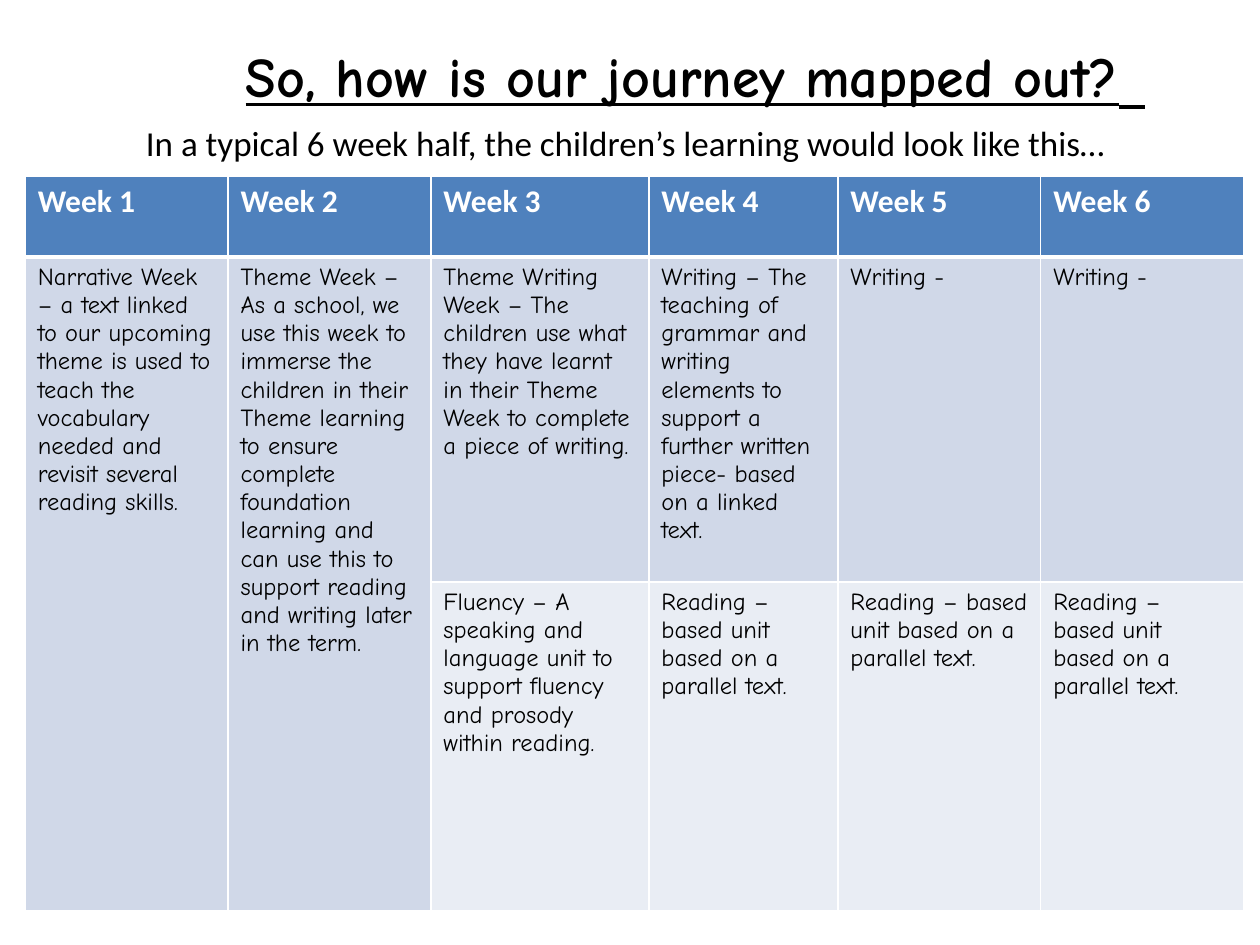
from lxml.etree import SubElement
from pptx import Presentation
from pptx.dml.color import RGBColor
from pptx.enum.text import PP_ALIGN as Align
from pptx.oxml.ns import qn
from pptx.util import Inches, Pt

SLIDE_W, SLIDE_H = Inches(10), Inches(7.5)
HAND, PLAIN = "Comic Neue", "Calibri"
BLACK, WHITE = "000000", "FFFFFF"
COLUMNS = [1.61, 1.61, 1.73, 1.5, 1.61, 1.61]
ROWS = [0.64, 2.58, 2.61]
ROW_FILLS = ["4F81BD", "D0D8E8", "E9EDF4"]
WEEKS = [f"Week {number}" for number in range(1, 7)]
FIRST_HALF = [
    "Narrative Week – a text linked to our upcoming theme is used to teach the "
    "vocabulary needed and revisit several reading skills.",
    "Theme Week – As a school, we use this week to immerse the children in their "
    "Theme learning to ensure complete foundation learning and can use this to "
    "support reading and writing later in the term.",
    "Theme Writing Week – The children use what they have learnt in their Theme "
    "Week to complete a piece of writing.",
    "Writing – The teaching of grammar and writing elements to support a further "
    "written piece- based on a linked text.",
    "Writing -",
    "Writing -",
]
SECOND_HALF = [
    "",
    "",
    "Fluency – A speaking and language unit to support fluency and prosody "
    "within reading.",
    "Reading – based unit based on a parallel text.",
    "Reading – based unit based on a parallel text.",
    "Reading –\nbased unit based on a parallel text.",
]


def colour(code):
    """Turn a hex string into a colour."""
    return RGBColor.from_string(code)


def add_run(paragraph, text, size, face, ink=BLACK, bold=False, underline=False):
    """Append one styled run to a paragraph."""
    run = paragraph.add_run()
    run.text = text
    font = run.font
    font.size, font.name = Pt(size), face
    font.bold, font.underline = bold, underline
    font.color.rgb = colour(ink)


def add_heading(slide):
    """Add the underlined question and its introductory sentence."""
    heading = slide.shapes.add_textbox(
        Inches(1.06), Inches(0.13), Inches(8.92), Inches(1.25)
    )
    frame = heading.text_frame
    frame.word_wrap = True
    question = frame.paragraphs[0]
    question.alignment = Align.CENTER
    for text, size in (("So, how is our journey mapped out?", 32), (" ", 43)):
        add_run(question, text, size, HAND, bold=True, underline=True)
    intro = frame.add_paragraph()
    intro.alignment = Align.LEFT
    intro.space_before = Pt(5)
    add_run(
        intro,
        "In a typical 6 week half, the children’s learning would look like this…",
        20,
        PLAIN,
    )


def add_borders(cell, bottom_width):
    """Draw white lines on the four sides of a cell."""
    properties = cell._tc.get_or_add_tcPr()
    for side, width in (("L", 1), ("R", 1), ("T", 1), ("B", bottom_width)):
        line = SubElement(properties, qn(f"a:ln{side}"), w=str(Pt(width)))
        SubElement(SubElement(line, qn("a:solidFill")), qn("a:srgbClr"), val=WHITE)


def fill_cell(cell, text, fill, is_header):
    """Set the borders, fill and wording of one cell."""
    add_borders(cell, 3 if is_header else 1)
    cell.fill.solid()
    cell.fill.fore_color.rgb = colour(fill)
    style = (18, PLAIN, WHITE, True) if is_header else (14, HAND)
    paragraph = cell.text_frame.paragraphs[0]
    for index, part in enumerate(text.split("\n") if text else []):
        if index:
            paragraph.add_line_break()
        add_run(paragraph, part, *style)


def add_timetable(slide):
    """Add the six-week table with its two full-height weeks."""
    timetable = slide.shapes.add_table(
        len(ROWS), len(COLUMNS), Inches(0.2), Inches(1.4),
        Inches(sum(COLUMNS)), Inches(sum(ROWS)),
    ).table
    for column, width in zip(timetable.columns, COLUMNS):
        column.width = Inches(width)
    for row, height in zip(timetable.rows, ROWS):
        row.height = Inches(height)
    for r, texts in enumerate((WEEKS, FIRST_HALF, SECOND_HALF)):
        for c, text in enumerate(texts):
            fill_cell(timetable.cell(r, c), text, ROW_FILLS[r], r == 0)
    for c in range(2):
        timetable.cell(1, c).merge(timetable.cell(2, c))


def main():
    """Build the slide and save it."""
    deck = Presentation()
    deck.slide_width, deck.slide_height = SLIDE_W, SLIDE_H
    slide = deck.slides.add_slide(deck.slide_layouts[6])
    add_heading(slide)
    add_timetable(slide)
    deck.save("out.pptx")


if __name__ == "__main__":
    main()
